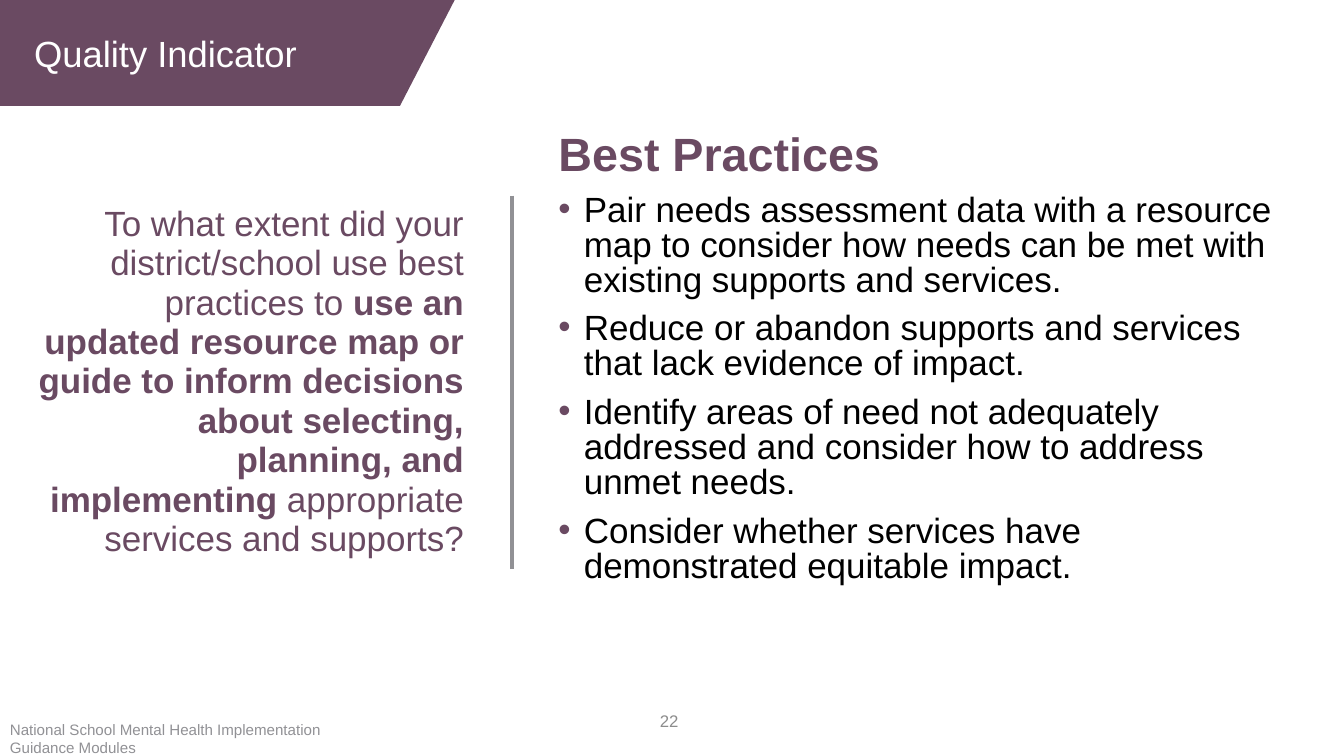
import pptx
import pptx.dml.color
import pptx.enum.shapes
import pptx.enum.text
import pptx.oxml.ns
import pptx.util
from lxml import etree

Cm = pptx.util.Cm
Pt = pptx.util.Pt
Align = pptx.enum.text.PP_ALIGN
Anchor = pptx.enum.text.MSO_ANCHOR
qn = pptx.oxml.ns.qn

PLUM = "6A4A62"
GRAY = "919195"


def add_run(paragraph, text, size, color, bold=False):
    run = paragraph.add_run()
    run.text = text
    run.font.name = "Arial"
    run.font.size = Pt(size)
    run.font.bold = bold
    run.font.color.rgb = pptx.dml.color.RGBColor.from_string(color)


def set_frame(shape, left, top, width, height, anchor):
    """Place a text shape and return its wrapped, fixed-size text frame."""
    shape.left, shape.top = Cm(left), Cm(top)
    shape.width, shape.height = Cm(width), Cm(height)
    frame = shape.text_frame
    frame.word_wrap = True
    frame.auto_size = pptx.enum.text.MSO_AUTO_SIZE.NONE
    frame.vertical_anchor = anchor
    return frame


presentation = pptx.Presentation()
presentation.slide_width = Cm(33.87)
presentation.slide_height = Cm(19.05)
slide = presentation.slides.add_slide(presentation.slide_layouts[1])
shapes = slide.shapes

# Banner
builder = shapes.build_freeform(0, 0)
builder.add_line_segments([(Cm(11.46), 0), (Cm(10.08), Cm(2.67)), (0, Cm(2.67))])
banner = builder.convert_to_shape()
banner.shadow.inherit = False
banner.fill.solid()
banner.fill.fore_color.rgb = pptx.dml.color.RGBColor.from_string(PLUM)
banner.line.fill.background()

# Banner label, slide number and footer
labels = [
    ("Quality Indicator", 0.61, 0.66, 8.08, 1.37, 26, "FFFFFF", Align.LEFT, Anchor.TOP),
    ("22", 9.73, 17.65, 7.62, 1.02, 12, "8C8C8C", Align.RIGHT, Anchor.MIDDLE),
    ("National School Mental Health Implementation Guidance Modules",
     0, 18.03, 9.68, 1.02, 10.8, GRAY, Align.LEFT, Anchor.TOP),
]
for text, left, top, width, height, size, color, alignment, anchor in labels:
    label = shapes.add_textbox(0, 0, 0, 0)
    paragraph = set_frame(label, left, top, width, height, anchor).paragraphs[0]
    paragraph.alignment = alignment
    add_run(paragraph, text, size, color)

# Question
question = set_frame(shapes.title, 0.64, 3.28, 11.3, 12.7, Anchor.MIDDLE).paragraphs[0]
question.alignment = Align.RIGHT
question.line_spacing = 0.94
add_run(question, "To what extent did your district/school use best practices to ", 25, PLUM)
add_run(question, "use an updated resource map or guide to inform decisions about selecting, "
        "planning, and implementing ", 25, PLUM, bold=True)
add_run(question, "appropriate services and supports?", 25, PLUM)

# Best practices
practices = [
    "Pair needs assessment data with a resource map to consider how needs can be met "
    "with existing supports and services.",
    "Reduce or abandon supports and services that lack evidence of impact.",
    "Identify areas of need not adequately addressed and consider how to address unmet needs.",
    "Consider whether services have demonstrated equitable impact.",
]
body = set_frame(slide.placeholders[1], 13.82, 3.28, 18.85, 11.56, Anchor.MIDDLE)
heading = body.paragraphs[0]
heading.line_spacing = 0.83
heading.space_before = Pt(0)
properties = heading._p.get_or_add_pPr()
properties.set("marL", "0")
properties.set("indent", "0")
etree.SubElement(properties, qn("a:buNone"))
add_run(heading, "Best Practices", 33.3, PLUM, bold=True)

for practice in practices:
    paragraph = body.add_paragraph()
    paragraph.line_spacing = 0.83
    paragraph.space_before = Pt(10)
    properties = paragraph._p.get_or_add_pPr()
    properties.set("marL", str(Cm(0.64)))
    properties.set("indent", str(-Cm(0.64)))
    bullet_color = etree.SubElement(properties, qn("a:buClr"))
    etree.SubElement(bullet_color, qn("a:srgbClr"), val=PLUM)
    etree.SubElement(properties, qn("a:buFont"), typeface="Arial")
    etree.SubElement(properties, qn("a:buChar"), char="•")
    add_run(paragraph, practice, 25, "000000")

# Divider
divider = shapes.add_connector(pptx.enum.shapes.MSO_CONNECTOR.STRAIGHT,
                               Cm(12.9), Cm(4.93), Cm(12.9), Cm(14.35))
divider.line.width = Pt(3)
divider.line.color.rgb = pptx.dml.color.RGBColor.from_string(GRAY)
etree.SubElement(divider._element.spPr, qn("a:effectLst"))

presentation.save("out.pptx")
